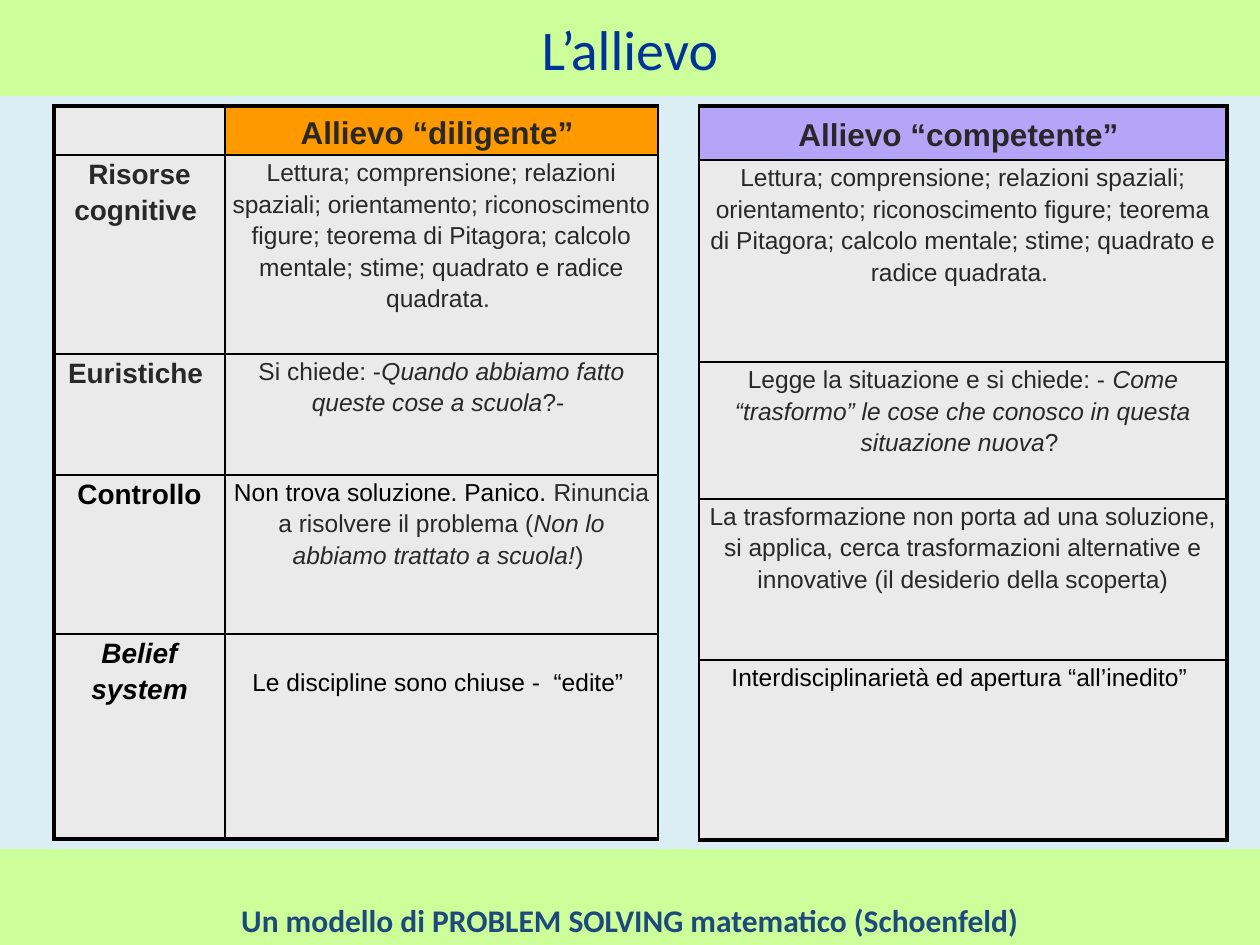
"""Build the slide comparing the diligent and the competent pupil."""
from dataclasses import dataclass

from lxml import etree
from pptx import Presentation
from pptx import util as u
from pptx.dml.color import RGBColor
from pptx.enum import shapes, text
from pptx.oxml import ns


@dataclass(frozen=True)
class Theme:
    page: str = "DBEEF4"
    band: str = "CCFF99"
    title: str = "003399"
    footer: str = "1F497D"
    cell: str = "EAEAEA"
    diligent: str = "FF9900"
    competent: str = "B5A5F9"
    ink: str = "282828"
    black: str = "000000"
    heading_font: str = "Calibri"
    body_font: str = "Arial"
    title_size: int = 32
    header_size: int = 18
    label_size: int = 16
    body_size: int = 14
    thin: float = 1
    medium: float = 1.5
    thick: float = 2.25


T = Theme()


@dataclass(frozen=True)
class Run:
    text: str
    italic: bool = False
    color: str = T.ink


@dataclass(frozen=True)
class Cell:
    paragraphs: tuple[tuple[Run, ...], ...] = ((),)
    size: int = T.body_size
    bold: bool = False
    fill: str = T.cell
    anchor: text.MSO_ANCHOR = text.MSO_ANCHOR.TOP
    top: int = 0


@dataclass(frozen=True)
class Grid:
    left: int
    top: int
    widths: tuple[int, ...]
    heights: tuple[int, ...]
    thick_side: str
    rows: tuple[tuple[Cell, ...], ...]


@dataclass(frozen=True)
class Band:
    top: int
    text: str
    size: int
    color: str
    bold: bool
    anchor: text.MSO_ANCHOR
    spacing: float


def px(n: int) -> int:
    return round(n * u.Inches(1) / 126)


def rgb(value: str) -> RGBColor:
    return RGBColor.from_string(value)


def header(label: str, fill: str) -> Cell:
    return Cell(((Run(label),),), T.header_size, True, fill, text.MSO_ANCHOR.MIDDLE)


def label(*lines: Run) -> Cell:
    return Cell(tuple((line,) for line in lines), T.label_size, True)


def body(*runs: Run, top: int = 0) -> Cell:
    return Cell((runs,), top=top)


def set_font(font, size: int, name: str, bold: bool) -> None:
    font.size, font.name, font.bold = u.Pt(size), name, bold


def draw_band(s, band: Band) -> None:
    sp = s.shapes.add_shape(shapes.MSO_SHAPE.RECTANGLE, 0, px(band.top), px(1260), px(96))
    sp.shadow.inherit = False
    sp.fill.solid()
    sp.fill.fore_color.rgb = rgb(T.band)
    sp.line.fill.background()
    tf = sp.text_frame
    tf.word_wrap, tf.vertical_anchor = True, band.anchor
    p = tf.paragraphs[0]
    p.alignment, p.line_spacing = text.PP_ALIGN.CENTER, band.spacing
    set_font(p.font, band.size, T.heading_font, band.bold)
    r = p.add_run()
    r.text = band.text
    r.font.color.rgb = rgb(band.color)


def draw_borders(cell, widths: dict[str, float]) -> None:
    pr = cell._tc.get_or_add_tcPr()
    for side in "LRTB":
        ln = etree.SubElement(pr, ns.qn(f"a:ln{side}"), w=str(u.Pt(widths[side])))
        fill = etree.SubElement(ln, ns.qn("a:solidFill"))
        etree.SubElement(fill, ns.qn("a:srgbClr"), val=T.black)


def draw_cell(cell, content: Cell) -> None:
    cell.fill.solid()
    cell.fill.fore_color.rgb = rgb(content.fill)
    cell.margin_left = cell.margin_right = px(6)
    cell.margin_top, cell.margin_bottom = px(content.top), 0
    cell.vertical_anchor = content.anchor
    tf = cell.text_frame
    for i, runs in enumerate(content.paragraphs):
        p = tf.add_paragraph() if i else tf.paragraphs[0]
        p.alignment, p.line_spacing = text.PP_ALIGN.CENTER, 1.15
        set_font(p.font, content.size, T.body_font, content.bold)
        for run in runs:
            r = p.add_run()
            r.text = run.text
            r.font.italic = run.italic
            r.font.color.rgb = rgb(run.color)


def draw_grid(s, grid: Grid) -> None:
    n_rows, n_cols = len(grid.heights), len(grid.widths)
    tbl = s.shapes.add_table(n_rows, n_cols, px(grid.left), px(grid.top),
                             px(sum(grid.widths)), px(sum(grid.heights))).table
    tbl.first_row = tbl.horz_banding = False
    for column, width in zip(tbl.columns, grid.widths):
        column.width = px(width)
    for row, height in zip(tbl.rows, grid.heights):
        row.height = px(height)
    edges = [T.thick, T.thin, T.thin, T.medium, T.thin, T.thick]
    for i, row in enumerate(grid.rows):
        for j, content in enumerate(row):
            left = T.thick if grid.thick_side == "L" and j == 0 else T.thin
            right = T.thick if grid.thick_side == "R" and j == n_cols - 1 else T.thin
            cell = tbl.cell(i, j)
            draw_borders(cell, {"L": left, "R": right, "T": edges[i], "B": edges[i + 1]})
            draw_cell(cell, content)


RESOURCES = body(Run("Lettura; comprensione; relazioni spaziali; orientamento; riconoscimento figure; "
                     "teorema di Pitagora; calcolo mentale; stime; quadrato e radice quadrata. "))
DILIGENT = Grid(54, 106, (171, 433), (49, 199, 121, 159, 205), "L", (
    (Cell(), header("Allievo “diligente” ", T.diligent)),
    (label(Run("Risorse"), Run("cognitive ")), RESOURCES),
    (label(Run("Euristiche ")),
     body(Run("Si chiede: -"), Run("Quando abbiamo fatto queste cose a scuola", True), Run("?- "))),
    (label(Run("Controllo", color=T.black)),
     body(Run("Non trova soluzione. Panico. ", color=T.black),
          Run("Rinuncia a risolvere il problema ("),
          Run("Non lo abbiamo trattato a scuola!", True), Run(") "))),
    (label(Run("Belief system", True, T.black)),
     body(Run("Le discipline sono chiuse -  “edite” ", color=T.black), top=31)),
))
COMPETENT = Grid(699, 106, (528,), (54, 202, 137, 161, 180), "R", (
    (header("Allievo “competente” ", T.competent),),
    (RESOURCES,),
    (body(Run("Legge la situazione e si chiede: - "),
          Run("Come “trasformo” le cose che conosco in questa situazione nuova", True), Run("? ")),),
    (body(Run("La trasformazione non porta ad una soluzione, si applica, cerca trasformazioni "
              "alternative e innovative (il desiderio della scoperta)")),),
    (body(Run("Interdisciplinarietà ed apertura “all’inedito” ", color=T.black)),),
))
BANDS = (
    Band(0, "L’allievo", T.title_size, T.title, False, text.MSO_ANCHOR.MIDDLE, 1.0),
    Band(849, "Un modello di PROBLEM SOLVING matematico (Schoenfeld)", T.header_size,
         T.footer, True, text.MSO_ANCHOR.BOTTOM, 0.9),
)


def main() -> None:
    prs = Presentation()
    prs.slide_width, prs.slide_height = px(1260), px(945)
    s = prs.slides.add_slide(prs.slide_layouts[6])
    s.background.fill.solid()
    s.background.fill.fore_color.rgb = rgb(T.page)
    for band in BANDS:
        draw_band(s, band)
    for grid in (DILIGENT, COMPETENT):
        draw_grid(s, grid)
    prs.save("out.pptx")


if __name__ == "__main__":
    main()
